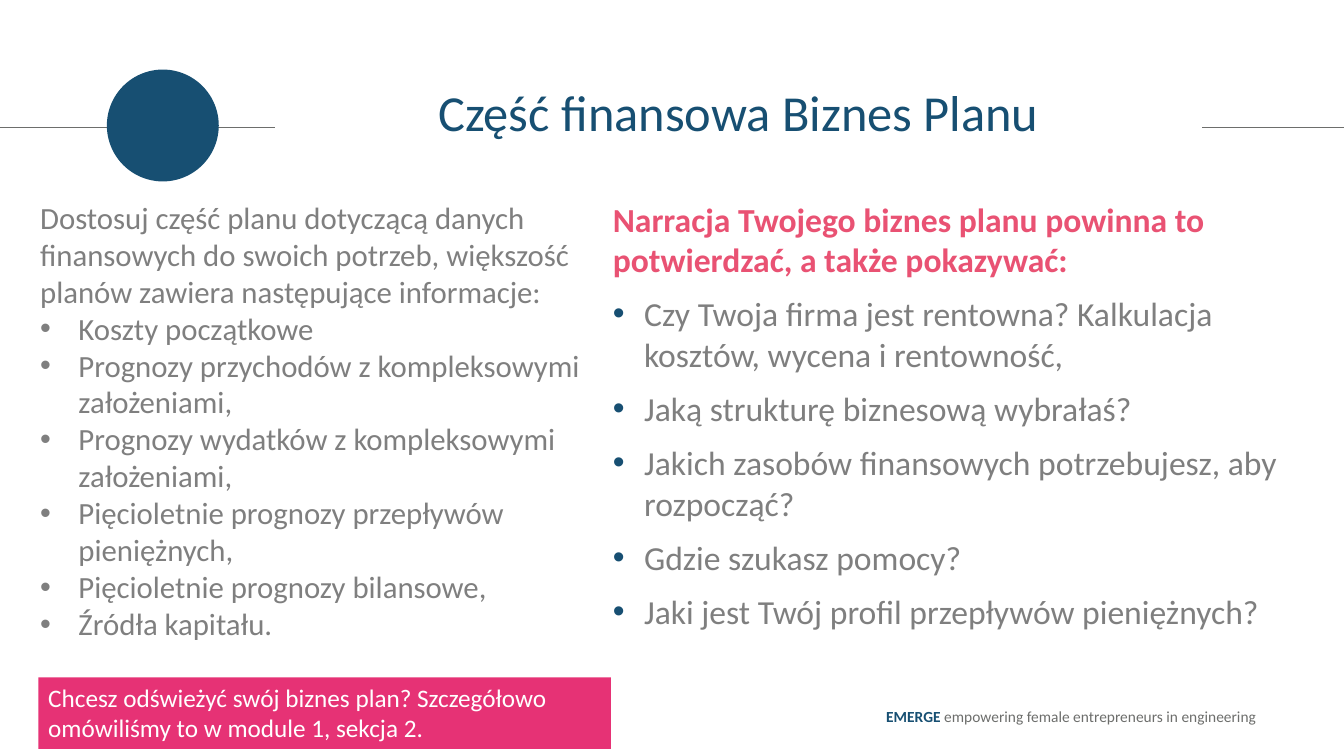
from dataclasses import dataclass

from lxml.etree import SubElement
from pptx import Presentation
from pptx.dml.color import RGBColor
from pptx.enum.shapes import MSO_CONNECTOR, MSO_SHAPE
from pptx.enum.text import MSO_ANCHOR, MSO_AUTO_SIZE, PP_ALIGN
from pptx.oxml.ns import qn
from pptx.util import Emu, Pt

COLORS = {"navy": "174F72", "gray": "7F7F7F", "footer": "6D6E6C",
          "coral": "E95273", "pink": "E63275", "white": "FFFFFF"}
FONT = "Calibri"


@dataclass(frozen=True)
class Box:
    left: int
    top: int
    width: int
    height: int

    def emu(self):
        return [px(v) for v in (self.left, self.top, self.width, self.height)]


@dataclass(frozen=True)
class BulletColumn:
    box: Box
    intro: str
    items: tuple[str, ...]
    size: int
    indent: int
    gap: int = 0
    intro_color: str = "gray"
    intro_bold: bool = False
    bullet_color: str = "gray"


COLUMNS = [
    BulletColumn(
        Box(598, 192, 735, 423),
        "Narracja Twojego biznes planu powinna to potwierdzać, a także pokazywać:",
        ("Czy Twoja firma jest rentowna? Kalkulacja kosztów, wycena i rentowność,",
         "Jaką strukturę biznesową wybrałaś?",
         "Jakich zasobów finansowych potrzebujesz, aby rozpocząć?",
         "Gdzie szukasz pomocy?",
         "Jaki jest Twój profil przepływów pieniężnych?"),
        size=24, indent=31, gap=10, intro_color="coral", intro_bold=True,
        bullet_color="navy"),
    BulletColumn(
        Box(30, 192, 568, 454),
        "Dostosuj część planu dotyczącą danych finansowych do swoich potrzeb, "
        "większość planów zawiera następujące informacje:",
        ("Koszty początkowe",
         "Prognozy przychodów z kompleksowymi założeniami,",
         "Prognozy wydatków z kompleksowymi założeniami,",
         "Pięcioletnie prognozy przepływów pieniężnych,",
         "Pięcioletnie prognozy bilansowe,",
         "Źródła kapitału."),
        size=22, indent=38),
]


def px(value: int) -> Emu:
    """Convert px, 100 to the inch, into EMU."""
    return Emu(value * 9144)


def rgb(name: str) -> RGBColor:
    return RGBColor.from_string(COLORS[name])


def add_text(p, text: str, *, size: int, color: str, bold: bool = False,
             align=PP_ALIGN.LEFT) -> None:
    p.alignment = align
    r = p.add_run()
    r.text = text
    r.font.name = FONT
    r.font.size = Pt(size)
    r.font.bold = bold
    r.font.color.rgb = rgb(color)


def set_frame(sp):
    tf = sp.text_frame
    tf.word_wrap = True
    tf.auto_size = MSO_AUTO_SIZE.NONE
    tf.vertical_anchor = MSO_ANCHOR.TOP
    return tf


def add_frame(s, box: Box):
    return set_frame(s.shapes.add_textbox(*box.emu()))


def set_fill(sp, color: str) -> None:
    sp.fill.solid()
    sp.fill.fore_color.rgb = rgb(color)
    sp.line.fill.background()


def add_filled(s, kind, box: Box, color: str):
    sp = s.shapes.add_shape(kind, *box.emu())
    sp.shadow.inherit = False
    set_fill(sp, color)
    return sp


def add_rule(s, x1: int, x2: int, y: int) -> None:
    line = s.shapes.add_connector(MSO_CONNECTOR.STRAIGHT, px(x1), px(y), px(x2), px(y))
    line.line.color.rgb = rgb("footer")
    line.line.width = Pt(0.5)
    SubElement(line._element.spPr, qn("a:effectLst"))


def add_bullet(p, color: str, indent: int) -> None:
    pPr = p._p.get_or_add_pPr()
    pPr.set("marL", str(px(indent)))
    pPr.set("indent", str(-px(indent)))
    SubElement(SubElement(pPr, qn("a:buClr")), qn("a:srgbClr"), val=COLORS[color])
    SubElement(pPr, qn("a:buFont"), typeface="Arial")
    SubElement(pPr, qn("a:buChar"), char="•")


def add_column(s, column: BulletColumn) -> None:
    tf = add_frame(s, column.box)
    add_text(tf.paragraphs[0], column.intro, size=column.size,
             color=column.intro_color, bold=column.intro_bold)
    for item in column.items:
        p = tf.add_paragraph()
        p.space_before = Pt(column.gap)
        add_bullet(p, column.bullet_color, column.indent)
        add_text(p, item, size=column.size, color="gray")


def add_title(s, box: Box, text: str) -> None:
    """Fill in the title and bring it to the front, so that it covers the rule."""
    title = s.shapes.title
    title.left, title.top, title.width, title.height = box.emu()
    set_fill(title, "white")
    p = set_frame(title).paragraphs[0]
    p.line_spacing = 0.9
    add_text(p, text, size=36, color="navy", align=PP_ALIGN.CENTER)
    title._element.getparent().append(title._element)


def main() -> None:
    prs = Presentation()
    prs.slide_width, prs.slide_height = px(1333), px(750)
    s = prs.slides.add_slide(prs.slide_layouts[5])

    add_rule(s, 1333, 0, 126)

    p = add_frame(s, Box(31, 697, 1225, 45)).paragraphs[0]
    add_text(p, "EMERGE ", size=11, color="navy", bold=True, align=PP_ALIGN.RIGHT)
    add_text(p, "empowering female entrepreneurs in engineering", size=11,
             color="footer", align=PP_ALIGN.RIGHT)

    add_filled(s, MSO_SHAPE.OVAL, Box(106, 69, 111, 111), "navy")
    add_title(s, Box(273, 82, 919, 94), "Część finansowa Biznes Planu")

    for column in COLUMNS:
        add_column(s, column)

    note = add_filled(s, MSO_SHAPE.RECTANGLE, Box(38, 672, 568, 71), "pink")
    add_text(set_frame(note).paragraphs[0],
             "Chcesz odświeżyć swój biznes plan? Szczegółowo omówiliśmy to "
             "w module 1, sekcja 2.", size=18, color="white")

    prs.save("out.pptx")


if __name__ == "__main__":
    main()
